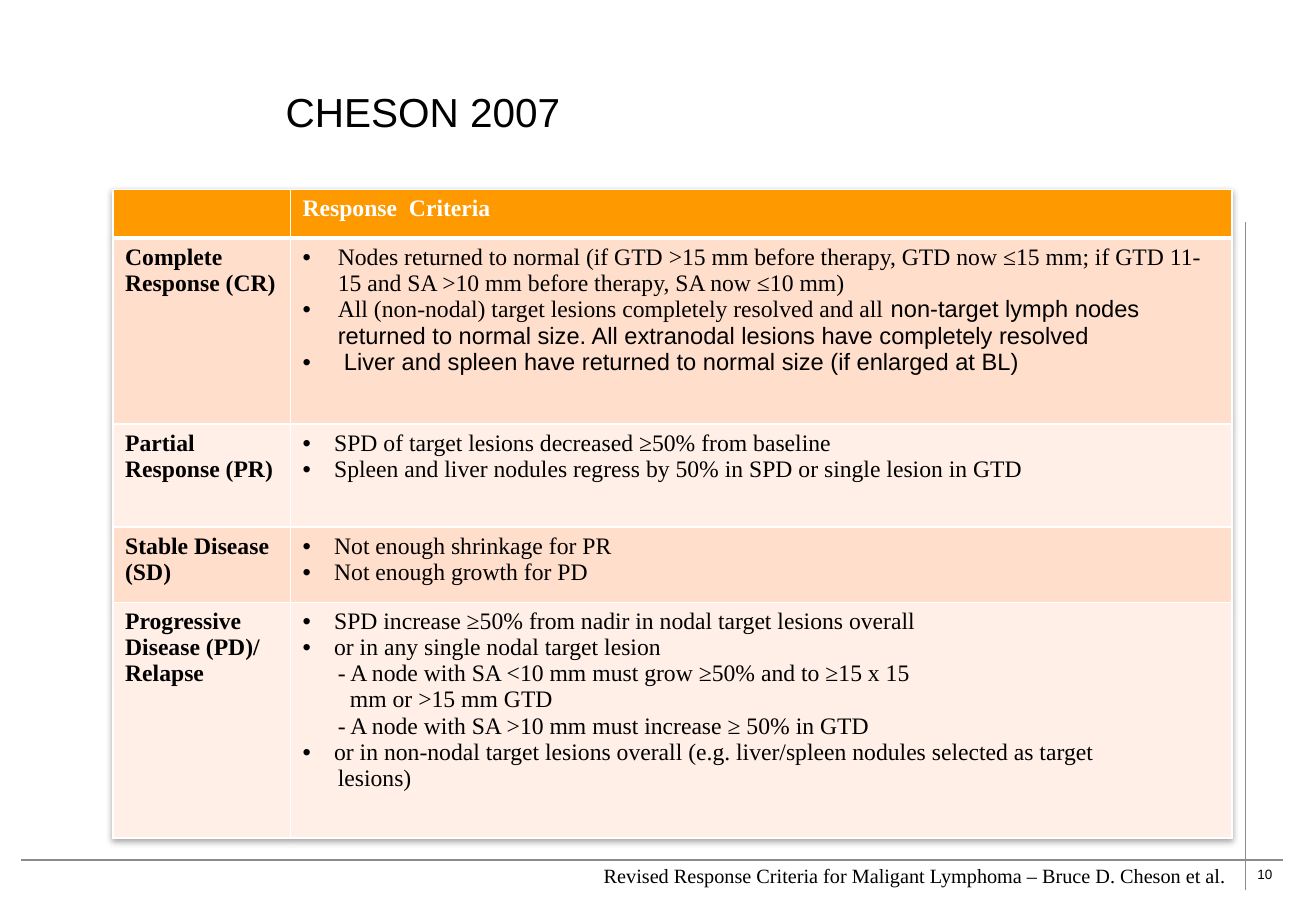
import pptx
import pptx.util
import pptx.dml.color
import pptx.enum.shapes
import pptx.enum.text
import pptx.oxml
import pptx.oxml.ns

Inches, Pt = pptx.util.Inches, pptx.util.Pt
ANCHOR = pptx.enum.text.MSO_ANCHOR
ALIGN = pptx.enum.text.PP_ALIGN
NS = pptx.oxml.ns.nsdecls("a")
COLORS = {"ink": "000000", "white": "FFFFFF", "rule": "8B8B8B",
          "head": "FF9900", "dark": "FFDECC", "light": "FFEFE7"}
SERIF, SANS = "Times New Roman", "Arial"


def rgb(name):
    return pptx.dml.color.RGBColor.from_string(COLORS[name])


def xml(text):
    return pptx.oxml.parse_xml(text)


class Deck:
    def __init__(self, width, height):
        self.prs = pptx.Presentation()
        self.prs.slide_width, self.prs.slide_height = Inches(width), Inches(height)
        self.slide = self.prs.slides.add_slide(self.prs.slide_layouts[5])

    def style(self, font, color="ink", **values):
        for key, value in values.items():
            setattr(font, key, value)
        font.color.rgb = rgb(color)

    def fill_text(self, para, parts, **values):
        for text, face in parts:
            run = para.add_run()
            run.text = text
            self.style(run.font, name=face, **values)

    def title(self, text, box):
        shape = self.slide.shapes.title
        for key, value in zip(("left", "top", "width", "height"), box):
            setattr(shape, key, Inches(value))
        shape.text_frame.vertical_anchor = ANCHOR.MIDDLE
        para = shape.text_frame.paragraphs[0]
        para.alignment = ALIGN.LEFT
        self.fill_text(para, [(text, SANS)], size=Pt(24))

    def label(self, text, box, face, size, wrap=True):
        shape = self.slide.shapes.add_textbox(*map(Inches, box))
        shape.text_frame.word_wrap = wrap
        self.fill_text(shape.text_frame.paragraphs[0], [(text, face)], size=Pt(size))

    def line(self, *ends):
        kind = pptx.enum.shapes.MSO_CONNECTOR.STRAIGHT
        line = self.slide.shapes.add_connector(kind, *map(Inches, ends))
        line.line.color.rgb, line.line.width = rgb("rule"), Pt(1)
        line._element.spPr.append(xml(f"<a:effectLst {NS}/>"))

    def table(self, box, widths, heights):
        frame = self.slide.shapes.add_table(
            len(heights), len(widths), *map(Inches, box))
        table = frame.table
        for col, width in zip(table.columns, widths):
            col.width = Inches(width)
        for row, height in zip(table.rows, heights):
            row.height = Inches(height)
        # Soft shadow under the whole table
        table._tbl.tblPr.insert(0, xml(
            f'<a:effectLst {NS}><a:outerShdw blurRad="40000" dist="23000" '
            'dir="5400000" rotWithShape="0"><a:srgbClr val="000000">'
            '<a:alpha val="35000"/></a:srgbClr></a:outerShdw></a:effectLst>'))
        return table

    def cell(self, cell, fill, paras, bold=False, color="ink", base=1):
        props = cell._tc.get_or_add_tcPr()
        for side, width in (("L", 1), ("R", 1), ("T", 1), ("B", base)):
            props.append(xml(
                f'<a:ln{side} {NS} w="{Pt(width)}"><a:solidFill><a:srgbClr '
                f'val="{COLORS["white"]}"/></a:solidFill></a:ln{side}>'))
        cell.fill.solid()
        cell.fill.fore_color.rgb = rgb(fill)
        frame = cell.text_frame
        for i, (left, hang, mark, parts) in enumerate(paras):
            para = frame.add_paragraph() if i else frame.paragraphs[0]
            props = para._p.get_or_add_pPr()
            props.set("marL", str(Inches(left)))
            props.set("indent", str(Inches(-hang)))
            if mark:
                props.append(xml(f'<a:buFont {NS} typeface="{SANS}"/>'))
                props.append(xml(f'<a:buChar {NS} char="•"/>'))
            self.fill_text(para, parts, size=Pt(14), bold=bold, color=color)


def plain(text, left=0):
    return left, 0, False, [(text, SERIF)]


def point(text, left=0.26, face=SERIF, more=()):
    return left, left, True, [(text, face), *more]


ROWS = [
    ("Complete Response (CR)", [
        point("Nodes returned to normal (if GTD >15 mm before therapy, GTD now "
              "≤15 mm; if GTD 11-15 and SA >10 mm before therapy, SA now ≤10 mm)", 0.29),
        point("All (non-nodal) target lesions completely resolved and all", 0.29,
              more=[(" non-target lymph nodes returned to normal size. All "
                     "extranodal lesions have completely resolved", SANS)]),
        point("Liver and spleen have returned to normal size (if enlarged at BL)",
              0.34, SANS)]),
    ("Partial Response (PR)", [
        point("SPD of target lesions decreased ≥50% from baseline"),
        point("Spleen and liver nodules regress by 50% in SPD or single lesion in GTD")]),
    ("Stable Disease (SD)", [
        point("Not enough shrinkage for PR"),
        point("Not enough growth for PD")]),
    ("Progressive Disease (PD)/ Relapse", [
        point("SPD increase ≥50% from nadir in nodal target lesions overall"),
        point("or in any single nodal target lesion"),
        plain("- A node with SA <10 mm must grow ≥50% and to ≥15 x 15", 0.29),
        plain("mm or >15 mm GTD", 0.39),
        plain("- A node with SA >10 mm must increase ≥ 50% in GTD", 0.29),
        point("or in non-nodal target lesions overall (e.g. liver/spleen nodules "
              "selected as target"),
        plain("lesions)", 0.29)]),
]


def main():
    deck = Deck(10.83, 7.5)

    # Page frame and number
    deck.line(0.17, 7.08, 10.56, 7.08)
    deck.line(10.25, 7.33, 10.25, 1.83)
    deck.label("10", (10.25, 7.08, 0.34, 0.23), SANS, 8, wrap=False)

    deck.title("CHESON 2007", (2.25, 0.42, 7.83, 1))

    # Response table
    table = deck.table((0.93, 1.56, 9.21, 5.3), (1.46, 7.75),
                       (0.36, 1.53, 0.85, 0.62, 1.94))
    for col, paras in enumerate(([], [plain("Response  Criteria")])):
        deck.cell(table.cell(0, col), "head", paras, True, "white", base=3)
    for row, (name, paras) in enumerate(ROWS, 1):
        fill = "dark" if row % 2 else "light"
        deck.cell(table.cell(row, 0), fill, [plain(name)], True)
        deck.cell(table.cell(row, 1), fill, paras)

    # Source line
    deck.label("Revised Response Criteria for Maligant Lymphoma – Bruce D. Cheson et al.",
               (4.87, 7.06, 5.42, 0.3), SERIF, 12)
    deck.prs.save("out.pptx")


if __name__ == "__main__":
    main()
